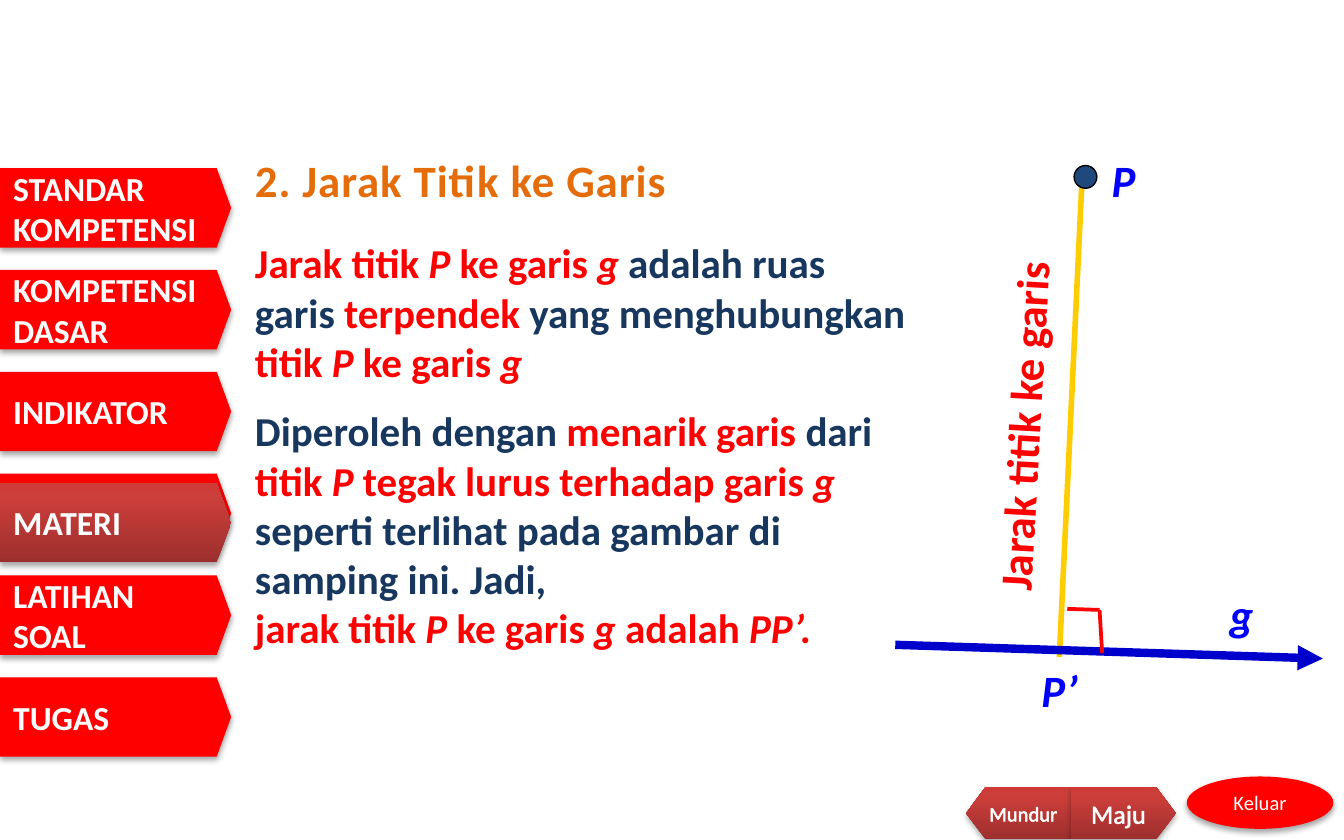
from copy import deepcopy

from lxml.etree import SubElement
from pptx import Presentation
from pptx.dml.color import RGBColor
from pptx.enum.shapes import MSO_CONNECTOR as LINK, MSO_SHAPE as SHAPE
from pptx.enum.text import MSO_ANCHOR as ANCHOR, PP_ALIGN as ALIGN
from pptx.oxml.ns import qn
from pptx.util import Cm, Pt

RED, BLUE, NAVY, WHITE = "FF0000", "0000FF", "17375E", "FFFFFF"
DARK_RED = [(0, "9C2F2D"), (0.8, "CB3E3A"), (1, "CE3B37")]
MENU = ["STANDAR KOMPETENSI", "KOMPETENSI DASAR", "INDIKATOR", "MATERI", "LATIHAN SOAL", "TUGAS"]
DEFINITION = [[(RED, "Jarak titik *P *ke garis *g *"), (NAVY, "adalah ruas garis "),
               (RED, "terpendek"), (NAVY, " yang menghubungkan "), (RED, "titik *P* ke garis *g*")]]
METHOD = [
    [(NAVY, "Diperoleh dengan "), (RED, "menarik garis "), (NAVY, "dari "),
     (RED, "titik *P *tegak lurus terhadap garis *g *"),
     (NAVY, "seperti terlihat pada gambar di samping ini. Jadi,")],
    [(RED, "jarak titik *P *ke garis* g *adalah* PP’.*")],
]


def rgb(value):
    """Turn a hex string into a colour."""
    return RGBColor.from_string(value)


def style(paragraph, size, color=None, bold=True):
    """Set the font shared by a whole paragraph."""
    font = paragraph.font
    font.name, font.size, font.bold = "Calibri", Pt(size), bold
    if color:
        font.color.rgb = rgb(color)


def add_shadow(shape):
    """Give a shape a soft shadow below it."""
    effects = shape._element.spPr.find(qn("a:effectLst"))
    outer = SubElement(effects, qn("a:outerShdw"), blurRad="40000", dist="23000",
                       dir="5400000", rotWithShape="0")
    black = SubElement(outer, qn("a:srgbClr"), val="000000")
    SubElement(black, qn("a:alpha"), val="35000")


def fill_gradient(shape, stops):
    """Fill a shape with stops running from bottom to top."""
    shape.fill.gradient()
    shape.fill.gradient_angle = 90
    stop_list = shape._element.spPr.find(".//" + qn("a:gsLst"))
    while len(stop_list) < len(stops):
        stop_list.append(deepcopy(stop_list[-1]))
    for stop, (position, color) in zip(shape.fill.gradient_stops, stops):
        stop.position = position
        stop.color.rgb = rgb(color)


def add_button(slide, kind, box, label, size, adjust=None, active=False,
               bold=False, align=ALIGN.CENTER):
    """Add a shadowed button with its label."""
    button = slide.shapes.add_shape(kind, *map(Cm, box))
    if adjust:
        button.adjustments[0] = adjust
    button.shadow.inherit = False
    add_shadow(button)
    button.line.fill.background()
    if active:
        fill_gradient(button, DARK_RED)
    else:
        button.fill.solid()
        button.fill.fore_color.rgb = rgb(RED)
    frame = button.text_frame
    frame.word_wrap, frame.vertical_anchor = True, ANCHOR.MIDDLE
    paragraph = frame.paragraphs[0]
    paragraph.text, paragraph.alignment = label, align
    style(paragraph, size, WHITE, bold)
    return button


def add_text(slide, box, paragraphs, size):
    """Add coloured text in which asterisks enclose italics."""
    holder = slide.shapes.add_textbox(*map(Cm, box))
    frame = holder.text_frame
    frame.word_wrap = True
    for index, parts in enumerate(paragraphs):
        paragraph = frame.add_paragraph() if index else frame.paragraphs[0]
        for color, marked in parts:
            for order, words in enumerate(marked.split("*")):
                if words:
                    run = paragraph.add_run()
                    run.text = words
                    run.font.italic = order % 2 == 1
                    run.font.color.rgb = rgb(color)
        style(paragraph, size)
    return holder


def add_line(slide, start, end, color, width):
    """Add a straight line between two points."""
    line = slide.shapes.add_connector(LINK.STRAIGHT, *map(Cm, (*start, *end)))
    line.line.color.rgb, line.line.width = rgb(color), Pt(width)
    SubElement(line._element.spPr, qn("a:effectLst"))
    return line


def add_menu(slide, left, top, width):
    """Stack the menu entries and lay the active one over its place."""
    height, pitch = 1.5, 1.925
    entries = [(top + row * pitch, label, False) for row, label in enumerate(MENU)]
    entries.append((top + 3 * pitch + 0.17, MENU[3], True))
    for y, label, active in entries:
        add_button(slide, SHAPE.PENTAGON, (left, y, width, height), label, 18,
                   0.182, active, True, ALIGN.LEFT)


def add_navigation(slide, left, top):
    """Place the back, forward and exit buttons."""
    width, height = 1.98, 0.99
    for column, (label, size) in enumerate([("Mundur", 11), ("Maju", 14)]):
        box = (left + column * width, top, width, height)
        button = add_button(slide, SHAPE.PENTAGON, box, label, size, 0.373, True)
        if column == 0:
            button._element.spPr.xfrm.set("flipH", "1")
        properties = button.text_frame.paragraphs[0].runs[0]._r.get_or_add_rPr()
        outline = SubElement(properties, qn("a:ln"), w="18415")
        SubElement(SubElement(outline, qn("a:solidFill")), qn("a:srgbClr"), val=WHITE)
    add_button(slide, SHAPE.OVAL, (left + 4.17, top - 0.2, 2.77, height), "Keluar", 11)


def add_explanation(slide, left, top, width):
    """Place the heading and the two paragraphs of the lesson."""
    heading = add_text(slide, (left, top, 11.3, 1.27),
                       [[("E46C0A", "2. Jarak Titik ke Garis")]], 24)
    title = heading.text_frame.paragraphs[0]
    title.alignment = ALIGN.JUSTIFY
    title.runs[0]._r.get_or_add_rPr().set("spc", "50")
    add_text(slide, (left, top + 1.6, width, 3.07), DEFINITION, 22)
    add_text(slide, (left, top + 4.78, width, 4.95), METHOD, 22)


def add_diagram(slide, left, top):
    """Draw point P, line g and the perpendicular between them."""
    def at(x, y):
        return left + x, top + y

    add_line(slide, at(3.1, 9.65), at(3.53, 0.61), "FFCC00", 3)
    point = slide.shapes.add_shape(SHAPE.OVAL, *map(Cm, (*at(3.38, 0.36), 0.43, 0.43)))
    point.shadow.inherit = False
    point.fill.solid()
    point.fill.fore_color.rgb = rgb("1F497D")
    point.line.color.rgb, point.line.width = rgb("000000"), Pt(0.75)

    line_g = add_line(slide, at(0, 9.42), at(8.08, 9.68), "0000CC", 4.5)
    SubElement(line_g.line._get_or_add_ln(), qn("a:tailEnd"), type="triangle")
    corner = at(3.86, 8.76)
    add_line(slide, at(3.25, 8.74), corner, RED, 2)
    add_line(slide, corner, at(3.91, 9.58), RED, 2)

    for name, x, y in [("P", 3.84, 0), ("g", 6.07, 8.2), ("P’", 2.51, 9.63)]:
        add_text(slide, (*at(x, y), 1.27, 1.27), [[(BLUE, f"*{name}*")]], 24)
    distance = add_text(slide, (*at(-1.47, 4.11), 7.82, 1.27),
                        [[(RED, "Jarak titik ke garis")]], 24)
    distance.rotation = 273.2


def main():
    """Build and save the lesson slide."""
    deck = Presentation()
    deck.slide_width, deck.slide_height = Cm(25.4), Cm(15.88)
    slide = deck.slides.add_slide(deck.slide_layouts[6])
    add_menu(slide, 0, 3.18, 4.37)
    add_navigation(slide, 18.26, 14.88)
    add_explanation(slide, 4.57, 2.77, 12.9)
    add_diagram(slide, 16.92, 2.77)
    deck.save("out.pptx")


if __name__ == "__main__":
    main()
